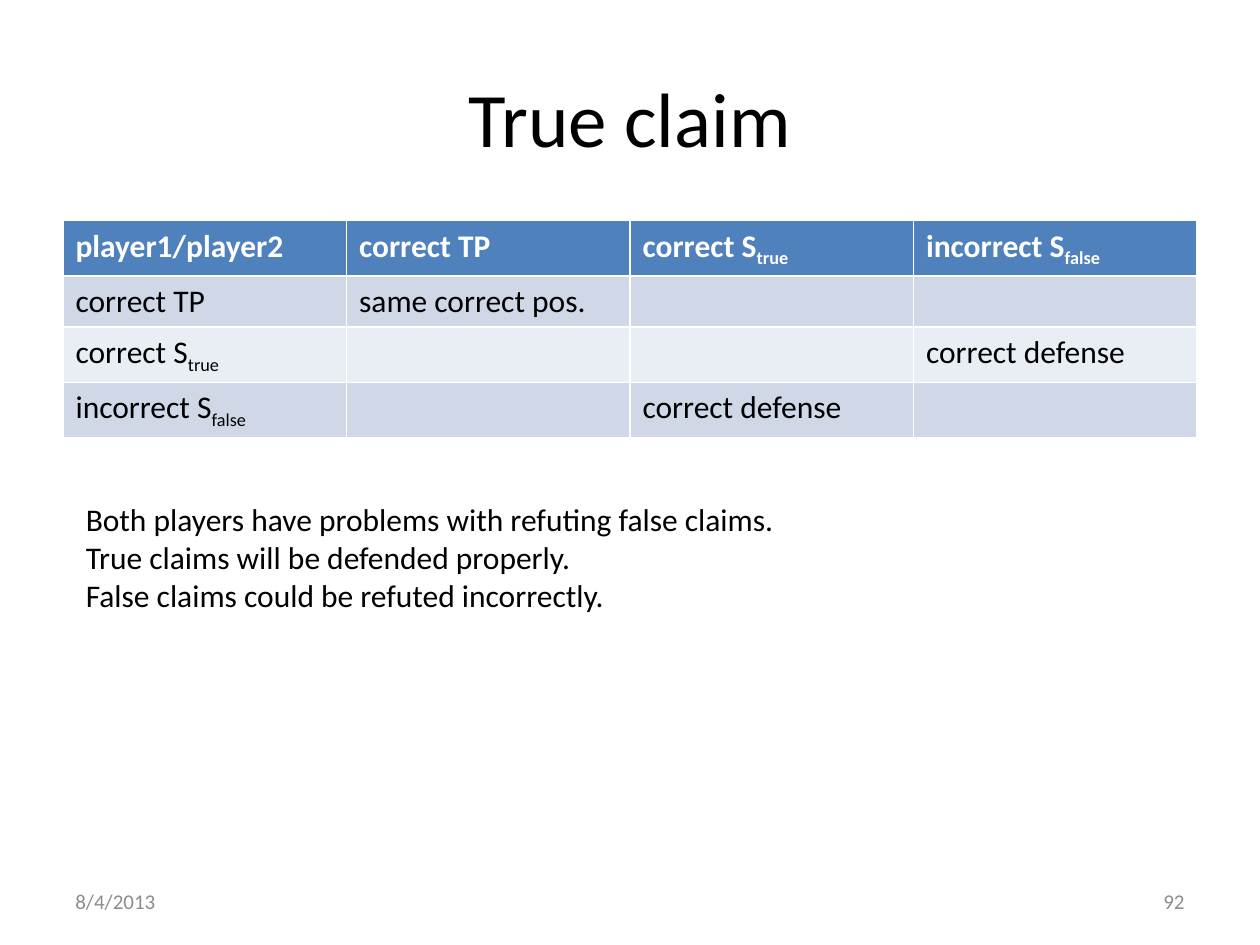
from pptx import Presentation
from pptx.dml.color import RGBColor
from pptx.enum.text import MSO_ANCHOR, PP_ALIGN
from pptx.util import Cm, Pt

LEFT, RIGHT, CENTER = PP_ALIGN.LEFT, PP_ALIGN.RIGHT, PP_ALIGN.CENTER
TOP, MIDDLE = MSO_ANCHOR.TOP, MSO_ANCHOR.MIDDLE
BLACK = RGBColor(0x00, 0x00, 0x00)
WHITE = RGBColor(0xFF, 0xFF, 0xFF)
GREY = RGBColor(0x8C, 0x8C, 0x8C)
BLUE = RGBColor(0x4F, 0x81, 0xBD)
BANDS = (RGBColor(0xE9, 0xED, 0xF4), RGBColor(0xD0, 0xD8, 0xE8))
FONT = "Calibri"

TP = ("correct TP",)
TRUE = ("correct S", "true")
FALSE = ("incorrect S", "false")
GUARD = ("correct defense",)
ROWS = (
    (("player1/player2",), TP, TRUE, FALSE),
    (TP, ("same correct pos.",), (), ()),
    (TRUE, (), (), GUARD),
    (FALSE, (), GUARD, ()),
)
NOTES = (
    "Both players have problems with refuting false claims.",
    "True claims will be defended properly.",
    "False claims could be refuted incorrectly.",
)


def add_run(para, text, size, color, bold=False):
    """Append one formatted run and return it."""
    run = para.add_run()
    run.text = text
    font = run.font
    font.name, font.size, font.bold = FONT, Pt(size), bold
    font.color.rgb = color
    return run


def add_title(slide, box, text):
    """Place the title placeholder and fill it."""
    title = slide.shapes.title
    title.left, title.top, title.width, title.height = box
    frame = title.text_frame
    frame.vertical_anchor = MIDDLE
    para = frame.paragraphs[0]
    para.alignment = CENTER
    add_run(para, text, 44, BLACK)


def add_grid(slide, box, rows):
    """Draw the table of moves; a second part of a cell is a subscript."""
    table = slide.shapes.add_table(len(rows), len(rows[0]), *box).table
    for i, row in enumerate(rows):
        head = i == 0
        for j, parts in enumerate(row):
            cell = table.cell(i, j)
            cell.fill.solid()
            cell.fill.fore_color.rgb = BLUE if head else BANDS[i % 2]
            para = cell.text_frame.paragraphs[0]
            for k, part in enumerate(parts):
                run = add_run(para, part, 18, WHITE if head else BLACK, head)
                if k:
                    run.font._element.set("baseline", "-25000")


def add_text(slide, box, lines, size, color, align=LEFT, anchor=TOP, wrap=True):
    """Add a text box with one paragraph per line."""
    frame = slide.shapes.add_textbox(*box).text_frame
    frame.word_wrap = wrap
    frame.vertical_anchor = anchor
    for i, line in enumerate(lines):
        para = frame.add_paragraph() if i else frame.paragraphs[0]
        para.alignment = align
        add_run(para, line, size, color)


def add_foot(slide, box, date, page):
    """Put the date at the left end and the page number at the right end."""
    left, top, width, height = box
    part = Cm(5.92)
    add_text(slide, (left, top, part, height), [date], 12, GREY, LEFT, MIDDLE)
    end = left + width - part
    add_text(slide, (end, top, part, height), [page], 12, GREY, RIGHT, MIDDLE)


def main():
    """Build and save the slide."""
    deck = Presentation()
    deck.slide_width, deck.slide_height = Cm(25.4), Cm(19.05)
    slide = deck.slides.add_slide(deck.slide_layouts[5])
    left, width = Cm(1.27), Cm(22.86)
    add_title(slide, (left, Cm(0.76), width, Cm(3.18)), "True claim")
    add_grid(slide, (left, Cm(4.45), width, Cm(4.12)), ROWS)
    add_foot(slide, (left, Cm(17.65), width, Cm(1.02)), "8/4/2013", "92")
    notes = (Cm(1.48), Cm(9.96), Cm(14.73), Cm(2.59))
    add_text(slide, notes, NOTES, 18, BLACK, wrap=False)
    deck.save("out.pptx")


if __name__ == "__main__":
    main()
